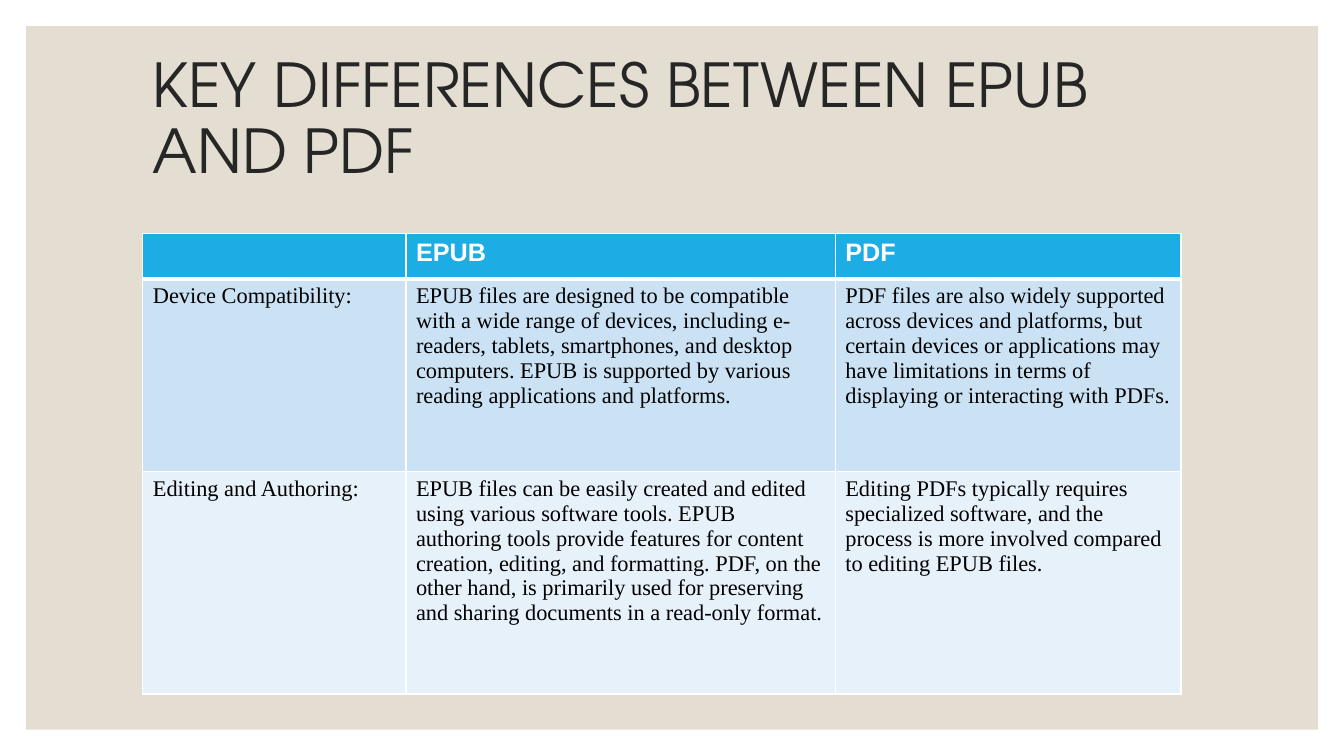
from dataclasses import dataclass

from lxml import etree
from pptx import Presentation
from pptx.dml.color import RGBColor
from pptx.enum import shapes, text
from pptx.oxml import ns
from pptx.util import Cm, Pt

SAND = RGBColor(0xE3, 0xDE, 0xD1)
INK = RGBColor(0x26, 0x26, 0x26)
BLUE = RGBColor(0x1C, 0xAD, 0xE4)
SKY = RGBColor(0xCB, 0xE2, 0xF5)
PALE = RGBColor(0xE7, 0xF1, 0xFA)
WHITE = RGBColor(0xFF, 0xFF, 0xFF)
BLACK = RGBColor(0, 0, 0)


@dataclass(frozen=True)
class Style:
    font: str
    size: float
    color: RGBColor
    bold: bool = False


@dataclass(frozen=True)
class Row:
    height: float
    fill: RGBColor
    style: Style
    top: float
    base: float
    cells: tuple[str, str, str]


TITLE = Style("TeX Gyre Adventor", 43.2, INK)
HEAD = Style("Arial", 18, WHITE, True)
BODY = Style("Times New Roman", 16, BLACK)

WIDTHS = (6.63, 10.82, 8.71)
ROWS = (
    Row(1.14, BLUE, HEAD, 1, 3, ("", "EPUB", "PDF")),
    Row(4.85, SKY, BODY, 3, 1, (
        "Device Compatibility:",
        "EPUB files are designed to be compatible with a wide range of devices, "
        "including e-readers, tablets, smartphones, and desktop computers. "
        "EPUB is supported by various reading applications and platforms.",
        "PDF files are also widely supported across devices and platforms, "
        "but certain devices or applications may have limitations in terms of "
        "displaying or interacting with PDFs.",
    )),
    Row(5.61, PALE, BODY, 1, 1, (
        "Editing and Authoring:",
        "EPUB files can be easily created and edited using various software "
        "tools. EPUB authoring tools provide features for content creation, "
        "editing, and formatting. PDF, on the other hand, is primarily used for "
        "preserving and sharing documents in a read-only format.",
        "Editing PDFs typically requires specialized software, and the process "
        "is more involved compared to editing EPUB files.",
    )),
)


def write(frame, words: str, style: Style) -> None:
    frame.text = words
    for run in frame.paragraphs[0].runs:
        font = run.font
        font.name = style.font
        font.size = Pt(style.size)
        font.bold = style.bold
        font.color.rgb = style.color


def edge(cell, top: float, base: float) -> None:
    props = cell._tc.get_or_add_tcPr()
    sides = (("L", 1), ("R", 1), ("T", top), ("B", base))
    for spot, (side, width) in enumerate(sides):
        line = etree.Element(ns.qn(f"a:ln{side}"), w=str(Pt(width)))
        fill = etree.SubElement(line, ns.qn("a:solidFill"))
        etree.SubElement(fill, ns.qn("a:srgbClr"), val=str(WHITE))
        props.insert(spot, line)


def add_panel(slide) -> None:
    panel = slide.shapes.add_shape(
        shapes.MSO_SHAPE.RECTANGLE, Cm(0.66), Cm(0.66), Cm(32.56), Cm(17.73))
    panel.shadow.inherit = False
    panel.fill.solid()
    panel.fill.fore_color.rgb = SAND
    panel.line.fill.background()


def add_title(slide) -> None:
    box = slide.shapes.add_textbox(Cm(3.6), Cm(1.15), Cm(26.67), Cm(3.8))
    frame = box.text_frame
    frame.word_wrap = True
    frame.vertical_anchor = text.MSO_ANCHOR.MIDDLE
    write(frame, "KEY DIFFERENCES BETWEEN EPUB AND PDF", TITLE)
    frame.paragraphs[0].line_spacing = 0.9


def add_grid(slide) -> None:
    high = sum(row.height for row in ROWS)
    grid = slide.shapes.add_table(
        len(ROWS), len(WIDTHS), Cm(3.6), Cm(5.89), Cm(sum(WIDTHS)), Cm(high)).table
    for column, width in zip(grid.columns, WIDTHS):
        column.width = Cm(width)
    for line, row in zip(grid.rows, ROWS):
        line.height = Cm(row.height)
        for cell, words in zip(line.cells, row.cells):
            cell.fill.solid()
            cell.fill.fore_color.rgb = row.fill
            write(cell.text_frame, words, row.style)
            edge(cell, row.top, row.base)


def main() -> None:
    deck = Presentation()
    deck.slide_width, deck.slide_height = Cm(33.87), Cm(19.05)
    slide = deck.slides.add_slide(deck.slide_layouts[6])
    add_panel(slide)
    add_title(slide)
    add_grid(slide)
    deck.save("out.pptx")


if __name__ == "__main__":
    main()
